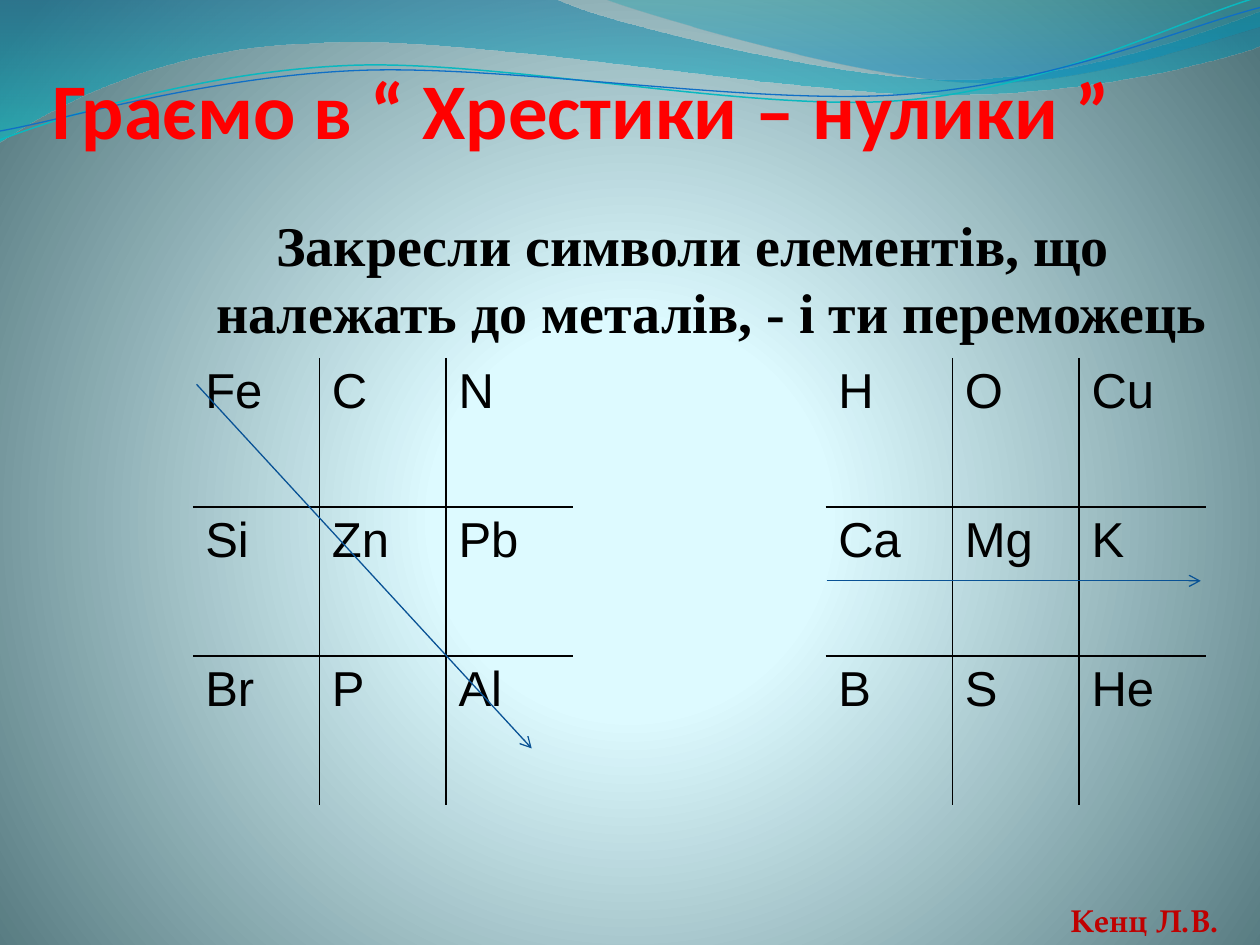
from lxml import etree
from pptx import Presentation
from pptx.dml.color import RGBColor
from pptx.enum import shapes, text
from pptx.oxml import ns
from pptx.util import Inches, Pt

BLACK = RGBColor(0, 0, 0)
RED = RGBColor(0xFF, 0, 0)
DARK_RED = RGBColor(0xC0, 0, 0)
GREEN = RGBColor(0x9B, 0xBB, 0x37)
ARROW_BLUE = RGBColor(0x09, 0x52, 0x95)
LINE_TEAL = RGBColor(0x0A, 0xB8, 0xBF)
LINE_BLUE = RGBColor(0x0F, 0x6F, 0xC6)
PALE = RGBColor(0xDE, 0xFB, 0xFF)
PALE_INNER = RGBColor(0xDD, 0xFA, 0xFF)
SLATE = RGBColor(0x52, 0x76, 0x7C)
WAVE_BLUE = RGBColor(0, 0x74, 0xA1)
WAVE_CYAN = RGBColor(0, 0xC6, 0xCF)
CREST_TEAL = RGBColor(0, 0xA1, 0xA9)
CREST_BLUE = RGBColor(0, 0x8B, 0xBF)


def add(parent, tag, **attributes):
    child = etree.SubElement(parent, ns.qn(tag))
    for name, value in attributes.items():
        child.set(name, str(value))
    return child


def set_gradient(fill, element, stops):
    """Fill with (position %, colour, opacity %) stops; return the gradFill."""
    fill.gradient()
    gradient = next(element.iter(ns.qn("a:gradFill")))
    for child in list(gradient):
        gradient.remove(child)
    stop_list = add(gradient, "a:gsLst")
    for position, color, opacity in stops:
        stop = add(stop_list, "a:gs", pos=position * 1000)
        add(add(stop, "a:srgbClr", val=color), "a:alpha", val=opacity * 1000)
    return gradient


presentation = Presentation()
presentation.slide_width, presentation.slide_height = Inches(10), Inches(7.5)
slide = presentation.slides.add_slide(presentation.slide_layouts[6])

# Background
gradient = set_gradient(slide.background.fill, slide.element,
                        [(0, PALE, 100), (25, PALE_INNER, 100), (100, SLATE, 100)])
add(add(gradient, "a:path", path="circle"), "a:fillToRect",
    l=10000, t=110000, r=10000, b=100000)

# Waves: a start point, then line ends (2 numbers) and Bezier curves (6 numbers)
waves = [
    ([(0, 0), (4.4, -0.01), (4.76, 0.17, 6.64, 0.63, 7.58, 0.63),
      (8.53, 0.63, 9.58, 0.26, 10, 0.09), (10.01, 0.36),
      (9.83, 0.44, 8.7, 0.76, 7.46, 0.75), (6.22, 0.75, 3.82, 0.28, 2.57, 0.34),
      (1.29, 0.36, 0.46, 0.83, -0.01, 1.13)],
     [(0, WAVE_BLUE, 45), (100, WAVE_CYAN, 55)], None),
    ([(4.79, -0.01), (5.09, 0.11, 6.82, 0.62, 7.69, 0.65),
      (8.56, 0.69, 9.61, 0.32, 10, 0.21), (10, 0)],
     [(0, CREST_TEAL, 30), (80, CREST_BLUE, 45)], None),
    ([(0, 1.11), (0.48, 0.93, 1.58, 0.57, 2.77, 0.52),
      (3.95, 0.47, 5.93, 0.89, 7.13, 0.8), (8.33, 0.71, 9.38, 0.15, 9.98, -0.02)],
     None, (LINE_TEAL, 0.85)),
    ([(0, 1.04), (0.47, 0.96, 1.64, 0.61, 2.83, 0.56),
      (4.03, 0.51, 5.97, 0.84, 7.17, 0.75), (8.36, 0.67, 9.41, 0.21, 10, 0.06)],
     None, (LINE_BLUE, 0.75)),
]
for segments, stops, stroke in waves:
    anchors = [tuple(map(Inches, segment[-2:])) for segment in segments]
    left, top = (min(values) for values in zip(*anchors))
    builder = slide.shapes.build_freeform(*anchors[0])
    builder.add_line_segments(anchors[1:], close=stops is not None)
    wave = builder.convert_to_shape()
    wave.shadow.inherit = False
    straight_lines = list(wave.element.iter(ns.qn("a:lnTo")))
    for segment, straight in zip(segments[1:], straight_lines):
        if len(segment) == 6:
            curve = etree.Element(ns.qn("a:cubicBezTo"))
            for x, y in zip(segment[::2], segment[1::2]):
                add(curve, "a:pt", x=Inches(x) - left, y=Inches(y) - top)
            straight.getparent().replace(straight, curve)
    if stops:
        wave.line.fill.background()
        gradient = set_gradient(wave.fill, wave.element, stops)
        add(gradient, "a:lin", ang=90 * 60000, scaled=0)
    else:
        wave.fill.background()
        wave.line.color.rgb, wave.line.width = stroke[0], Pt(stroke[1])

# Title, task and author
texts = [
    ("Граємо в “ Хрестики – нулики ”", (0.23, 0.23, 8.77, 1), "Calibri", 45, RED),
    ("Закресли символи елементів, що належать до металів, - і ти переможець",
     (1.28, 1.62, 8.44, 0.47), "Times New Roman", 32, BLACK),
    ("Кенц Л.В.", (8.36, 7.1, 1.45, 0.4), "TeX Gyre Pagella", 18, DARK_RED),
]
boxes = []
for words, place, font_name, size, color in texts:
    box = slide.shapes.add_textbox(*map(Inches, place))
    box.text_frame.word_wrap = True
    paragraph = box.text_frame.paragraphs[0]
    paragraph.alignment = text.PP_ALIGN.CENTER
    run = paragraph.add_run()
    run.text = words
    run.font.name, run.font.size, run.font.bold = font_name, Pt(size), True
    run.font.color.rgb = color
    boxes.append(box)
title, task, author = boxes

title.text_frame.vertical_anchor = text.MSO_ANCHOR.BOTTOM
title.text_frame.margin_left = title.text_frame.margin_right = 0
title.text_frame.margin_bottom = 0

task_paragraph = task.text_frame.paragraphs[0]
task_paragraph.space_before = Pt(3.6)
properties = task_paragraph._p.get_or_add_pPr()
properties.set("marL", str(Inches(0.3)))
properties.set("indent", str(Inches(-0.3)))

author.text_frame.word_wrap = False
author.text_frame.auto_size = text.MSO_AUTO_SIZE.SHAPE_TO_FIT_TEXT
properties = author.text_frame.paragraphs[0].runs[0].font._element
properties.set("spc", "50")
outline = add(properties, "a:ln", w=Pt(1))
add(add(outline, "a:solidFill"), "a:srgbClr", val=GREEN)
properties.insert(0, outline)

# Two noughts-and-crosses grids in one table; each symbol row spans two table rows
grids = {
    0: ["Fe C N", "Si Zn Pb", "Br P Al"],
    5: ["H O Cu", "Ca Mg K", "B S He"],
}
ROWS, COLUMNS = 8, 8
frame = slide.shapes.add_table(ROWS, COLUMNS, Inches(1.53), Inches(2.25),
                               Inches(8.04), Inches(4.73))
table = frame.table
table.first_row = table.horz_banding = False
style = next(frame._element.iter(ns.qn("a:tableStyleId")))
style.text = "{2D5ABB26-0587-4C30-8999-92F81FD0307C}"  # no style, no grid

for first_column, lines in grids.items():
    for row in range(1, ROWS - 1):
        line, lower_half = divmod(row - 1, 2)
        for offset, symbol in enumerate(lines[line].split()):
            cell = table.cell(row, first_column + offset)
            if not lower_half:
                run = cell.text_frame.paragraphs[0].add_run()
                run.text = symbol
                run.font.name, run.font.size = "Arial", Pt(28)
                run.font.color.rgb = BLACK
            sides = {
                "a:lnL": offset > 0,
                "a:lnR": offset < 2,
                "a:lnT": line > 0 and not lower_half,
                "a:lnB": line < 2 and lower_half,
            }
            for tag, drawn in sides.items():
                border = add(cell._tc.get_or_add_tcPr(), tag, w=Pt(1))
                if drawn:
                    add(add(border, "a:solidFill"), "a:srgbClr", val=BLACK)
                else:
                    add(border, "a:noFill")
for cell in table.iter_cells():
    cell.fill.background()

# Winning lines
for ends in [(1.56, 3.05, 4.22, 5.94), (6.56, 4.61, 9.53, 4.61)]:
    arrow = slide.shapes.add_connector(shapes.MSO_CONNECTOR.STRAIGHT, *map(Inches, ends))
    arrow.line.color.rgb, arrow.line.width = ARROW_BLUE, Pt(0.75)
    add(arrow.line._get_or_add_ln(), "a:tailEnd", type="arrow")
    add(arrow._element.spPr, "a:effectLst")

presentation.save("out.pptx")
